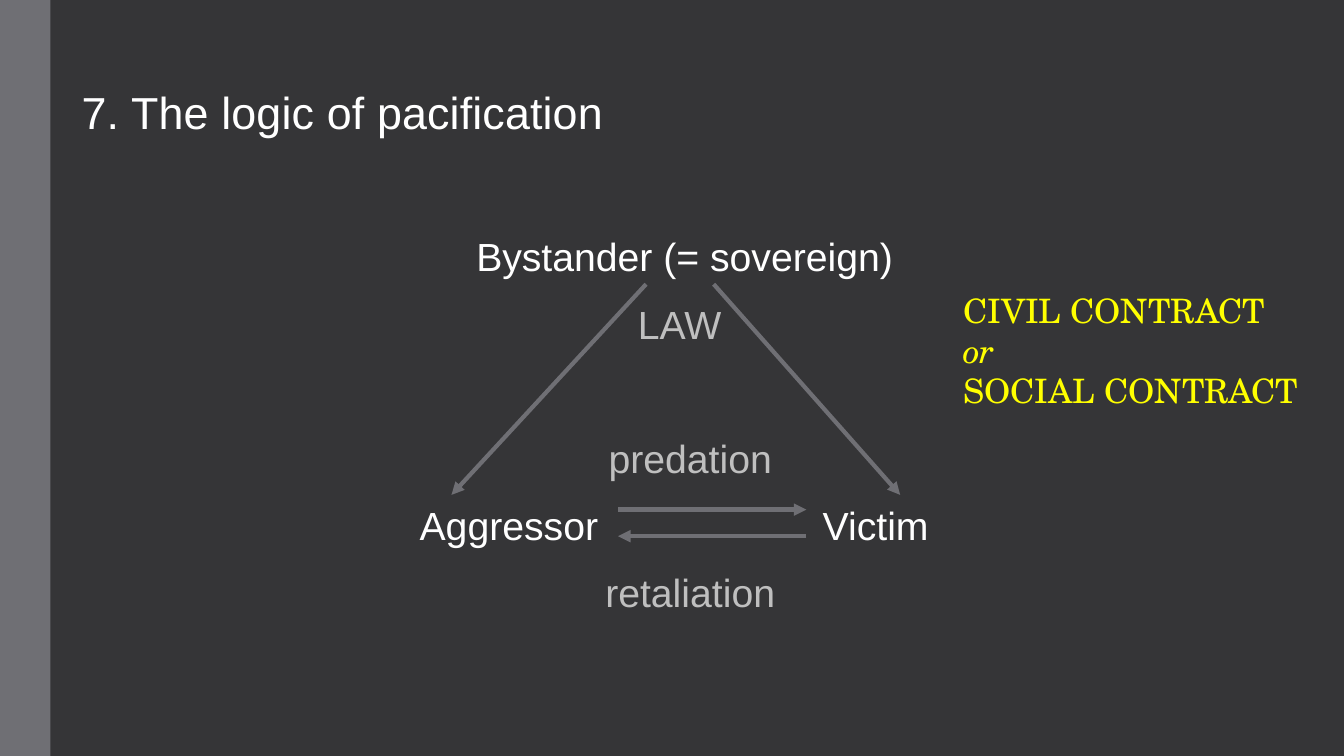
"""Build the slide on the logic of pacification: a triangle of roles and arrows."""
from lxml import etree
from pptx import Presentation
from pptx.dml.color import RGBColor
from pptx.enum.shapes import MSO_CONNECTOR, MSO_SHAPE
from pptx.enum.text import MSO_ANCHOR, PP_ALIGN
from pptx.oxml.ns import qn
from pptx.util import Pt

STRAIGHT = MSO_CONNECTOR.STRAIGHT
RECTANGLE = MSO_SHAPE.RECTANGLE
MIDDLE = MSO_ANCHOR.MIDDLE
LEFT, CENTER = PP_ALIGN.LEFT, PP_ALIGN.CENTER

THEME = {
    "background": RGBColor(0x35, 0x35, 0x37),
    "grey": RGBColor(0x6F, 0x6F, 0x74),
    "white": RGBColor(0xFF, 0xFF, 0xFF),
    "muted": RGBColor(0xBF, 0xBF, 0xBF),
    "yellow": RGBColor(0xFF, 0xFF, 0x00),
    "sans": "Arial",
    "serif": "TeX Gyre Schola",
    "title_size": Pt(32),
    "label_size": Pt(28),
    "contract_size": Pt(24),
}

presentation = Presentation()
presentation.slide_width = Pt(960)
presentation.slide_height = Pt(540)
slide = presentation.slides.add_slide(presentation.slide_layouts[6])
slide.background.fill.solid()
slide.background.fill.fore_color.rgb = THEME["background"]


def add_text(lines, left, middle, width, height, align, color, font, size):
    """Place lines of text around a vertical middle and return their runs."""
    box = slide.shapes.add_textbox(Pt(left), Pt(middle - height / 2), Pt(width), Pt(height))
    frame = box.text_frame
    frame_format = {"word_wrap": True, "vertical_anchor": MIDDLE, "margin_left": 0,
                    "margin_right": 0, "margin_top": 0, "margin_bottom": 0}
    for name, value in frame_format.items():
        setattr(frame, name, value)
    runs = []
    for index, line in enumerate(lines):
        paragraph = frame.paragraphs[0] if index == 0 else frame.add_paragraph()
        paragraph.alignment = align
        run = paragraph.add_run()
        run.text = line
        for name, value in {"name": THEME[font], "size": THEME[size]}.items():
            setattr(run.font, name, value)
        run.font.color.rgb = THEME[color]
        runs.append(run)
    return runs


sidebar = slide.shapes.add_shape(RECTANGLE, 0, 0, Pt(36), Pt(540))
sidebar.shadow.inherit = False
sidebar.fill.solid()
sidebar.fill.fore_color.rgb = THEME["grey"]
sidebar.line.fill.background()

title_run, = add_text(["7. The logic of pacification"], 58.3, 79.5, 800, 40,
                      LEFT, "white", "sans", "title_size")
title_run.font._element.set("spc", "10")

FIRST_ROW, ROW_STEP, LABEL_WIDTH = 183, 48, 340
labels = [
    ("Bystander (= sovereign)", 489, 0, "white"),
    ("LAW", 485.5, 1, "muted"),
    ("predation", 493, 3, "muted"),
    ("Aggressor", 363.5, 4, "white"),
    ("Victim", 625.5, 4, "white"),
    ("retaliation", 493, 5, "muted"),
]
for text, center, row, color in labels:
    add_text([text], center - LABEL_WIDTH / 2, FIRST_ROW + row * ROW_STEP,
             LABEL_WIDTH, 34, CENTER, color, "sans", "label_size")

arrows = [
    (461.5, 203, 322.5, 353.5),
    (509.8, 203, 643, 353.5),
    (441.4, 364, 576, 364),
    (576, 383, 441.4, 383),
]
for points in arrows:
    arrow = slide.shapes.add_connector(STRAIGHT, *map(Pt, points))
    arrow.line.color.rgb = THEME["grey"]
    arrow.line.width = Pt(3)
    etree.SubElement(arrow.line._get_or_add_ln(), qn("a:tailEnd"), type="triangle")
    etree.SubElement(arrow._element.spPr, qn("a:effectLst"))

contract_runs = add_text(["CIVIL CONTRACT", "or", "SOCIAL CONTRACT"], 688, 250, 246, 88,
                         LEFT, "yellow", "serif", "contract_size")
contract_runs[1].font.italic = True

presentation.save("out.pptx")
